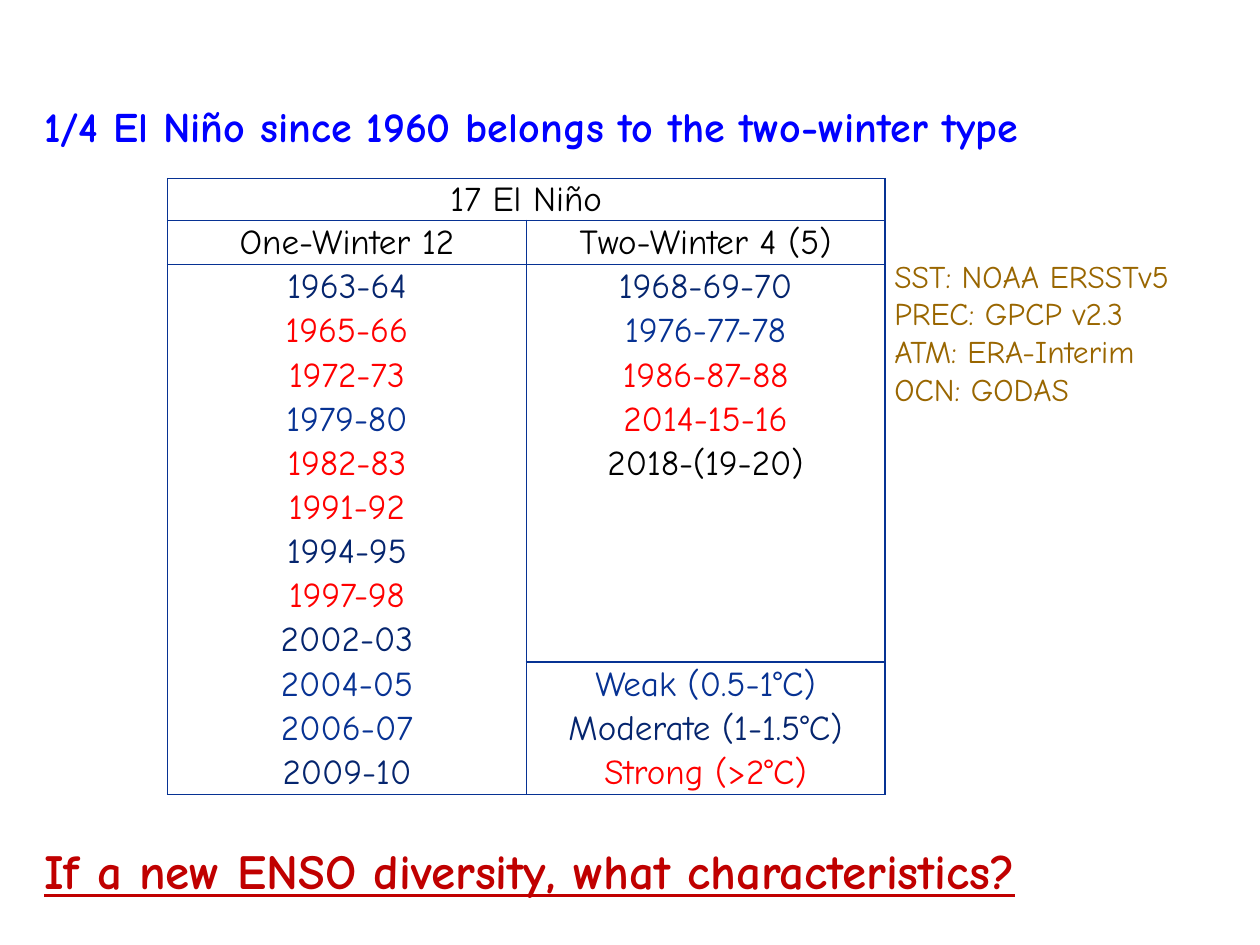
from dataclasses import dataclass

from lxml.etree import SubElement
from pptx import Presentation
from pptx.dml.color import RGBColor
from pptx.enum.text import MSO_ANCHOR as Anchor, MSO_AUTO_SIZE as AutoSize, PP_ALIGN as Align
from pptx.oxml.ns import qn
from pptx.util import Cm, Pt

FONT = "Comic Neue"
COLOURS = {
    "plain": "000000",
    "weak": "073293",
    "moderate": "05256E",
    "strong": "FF0000",
    "border": "073293",
    "title": "0000FF",
    "question": "C00000",
    "source": "996600",
}


@dataclass
class Entry:
    text: str = ""
    colour: str = "plain"


@dataclass
class Note:
    lines: list[str]
    left: float
    top: float
    width: float
    height: float
    size: int
    colour: str
    emphasis: bool = False
    underline: bool = False
    wrap: bool = False


ONE_WINTER = [
    Entry("17 El Niño"),
    Entry("One-Winter 12"),
    Entry("1963-64", "moderate"),
    Entry("1965-66", "strong"),
    Entry("1972-73", "strong"),
    Entry("1979-80", "weak"),
    Entry("1982-83", "strong"),
    Entry("1991-92", "strong"),
    Entry("1994-95", "moderate"),
    Entry("1997-98", "strong"),
    Entry("2002-03", "moderate"),
    Entry("2004-05", "weak"),
    Entry("2006-07", "weak"),
    Entry("2009-10", "moderate"),
]
TWO_WINTER = [
    Entry(),
    Entry("Two-Winter 4 (5)"),
    Entry("1968-69-70", "moderate"),
    Entry("1976-77-78", "weak"),
    Entry("1986-87-88", "strong"),
    Entry("2014-15-16", "strong"),
    Entry("2018-(19-20)"),
    *[Entry()] * 4,
    Entry("Weak (0.5-1°C)", "weak"),
    Entry("Moderate (1-1.5°C)", "moderate"),
    Entry("Strong (>2°C)", "strong"),
]
# Row boundaries that carry a horizontal rule, for each column
RULES = [{0, 1, 2, 14}, {0, 1, 2, 11, 14}]

NOTES = [
    Note(["1/4 El Niño since 1960 belongs to the two-winter type"],
         0.64, 1.9, 24.13, 1.28, 24, "title", emphasis=True, wrap=True),
    Note(["If a new ENSO diversity, what characteristics?"],
         0.64, 16.81, 24.05, 1.45, 28, "question", emphasis=True, underline=True),
    Note(["SST: NOAA ERSSTv5", "PREC: GPCP v2.3", "ATM: ERA-Interim", "OCN: GODAS"],
         17.78, 5.05, 7.21, 3.33, 18, "source"),
]


def style_font(font, size: int, colour: str) -> None:
    font.name = FONT
    font.size = Pt(size)
    font.color.rgb = RGBColor.from_string(COLOURS[colour])


def set_borders(cell, top: bool, bottom: bool) -> None:
    """Rule both sides of the cell, and its top and bottom where asked."""
    properties = cell._tc.get_or_add_tcPr()
    for side, ruled in (("L", True), ("R", True), ("T", top), ("B", bottom)):
        line = SubElement(properties, qn(f"a:ln{side}"), w=str(Pt(1)))
        if ruled:
            fill = SubElement(line, qn("a:solidFill"))
            SubElement(fill, qn("a:srgbClr"), val=COLOURS["border"])
        else:
            SubElement(line, qn("a:noFill"))


def fill_cell(cell, entry: Entry) -> None:
    cell.fill.background()
    cell.vertical_anchor = Anchor.MIDDLE
    cell.margin_left = cell.margin_right = cell.margin_top = Cm(0.03)
    cell.margin_bottom = 0
    para = cell.text_frame.paragraphs[0]
    para.text = entry.text
    para.alignment = Align.CENTER
    style_font(para.font, 20, entry.colour)


def add_winter_table(page) -> None:
    columns = [ONE_WINTER, TWO_WINTER]
    row_count = len(ONE_WINTER)
    table = page.shapes.add_table(
        row_count, len(columns), Cm(3.38), Cm(3.6), Cm(14.46), Cm(12.47)).table
    table.first_row = table.horz_banding = False
    for column in table.columns:
        column.width = Cm(7.23)
    for index, row in enumerate(table.rows):
        row.height = Cm(0.89 if index else 0.83)
    for column_index, (entries, rules) in enumerate(zip(columns, RULES)):
        for row_index, entry in enumerate(entries):
            cell = table.cell(row_index, column_index)
            set_borders(cell, row_index in rules, row_index + 1 in rules)
            fill_cell(cell, entry)
    table.cell(0, 0).merge(table.cell(0, 1))


def add_note(page, note: Note) -> None:
    box = page.shapes.add_textbox(
        Cm(note.left), Cm(note.top), Cm(note.width), Cm(note.height))
    frame = box.text_frame
    frame.word_wrap = note.wrap
    frame.auto_size = AutoSize.SHAPE_TO_FIT_TEXT
    frame.text = "\n".join(note.lines)
    for para in frame.paragraphs:
        style_font(para.font, note.size, note.colour)
        para.font.bold = note.emphasis
        para.font.underline = note.underline


def main() -> None:
    deck = Presentation()
    deck.slide_width, deck.slide_height = Cm(25.4), Cm(19.05)
    page = deck.slides.add_slide(deck.slide_layouts[6])
    add_winter_table(page)
    for note in NOTES:
        add_note(page, note)
    deck.save("out.pptx")


if __name__ == "__main__":
    main()
